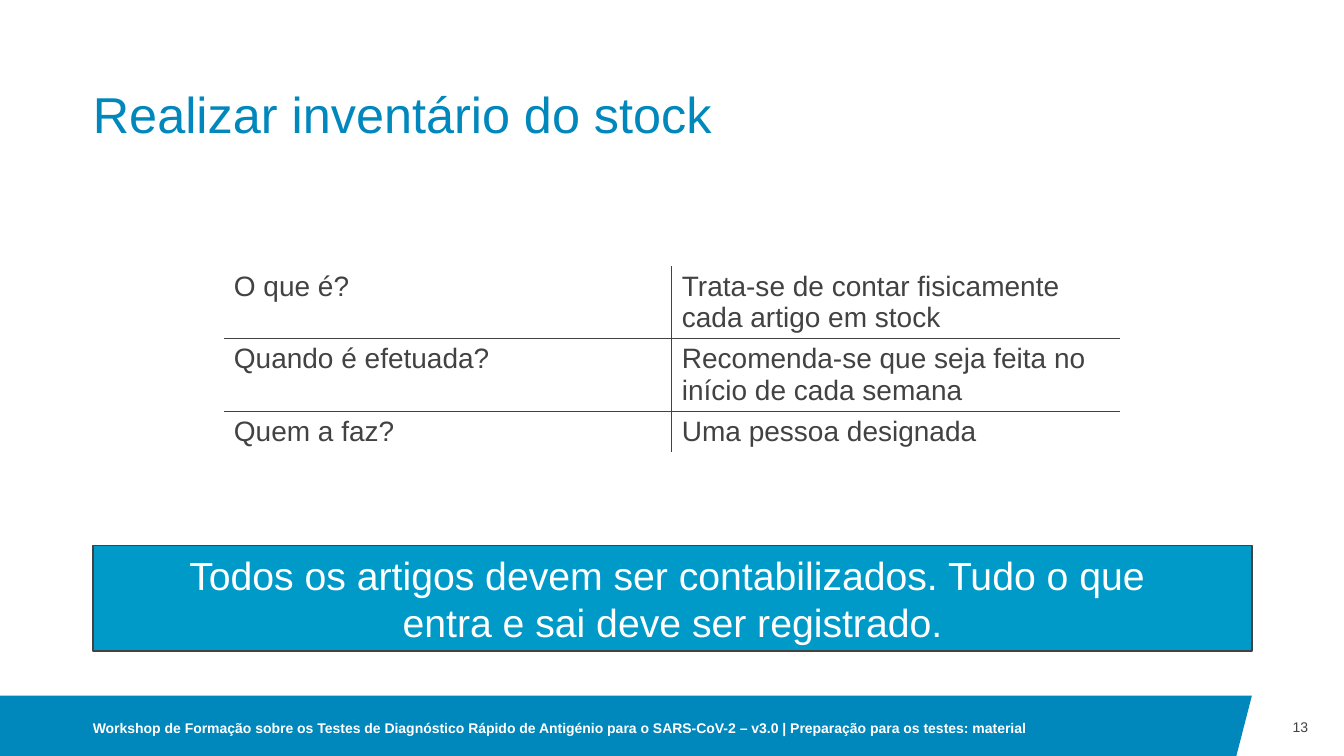
from lxml.etree import SubElement
from pptx import Presentation
from pptx.dml.color import RGBColor
from pptx.enum.shapes import MSO_SHAPE
from pptx.enum.text import MSO_ANCHOR, MSO_AUTO_SIZE, PP_ALIGN
from pptx.oxml import parse_xml
from pptx.oxml.ns import nsdecls, qn
from pptx.util import Cm, Pt

BLUE = RGBColor(0x00, 0x87, 0xBC)
CYAN = RGBColor(0x00, 0x9A, 0xC9)
GRAY = RGBColor(0x42, 0x42, 0x42)
WHITE = RGBColor(0xFF, 0xFF, 0xFF)

TITLE = "Realizar inventário do stock"
ROWS = [
    ("O que é?", "Trata-se de contar fisicamente cada artigo em stock"),
    ("Quando é efetuada?", "Recomenda-se que seja feita no início de cada semana"),
    ("Quem a faz?", "Uma pessoa designada"),
]
NOTE = [
    "Todos os artigos devem ser contabilizados. Tudo o que ",
    "entra e sai deve ser registrado.",
]
FOOTER = (
    "Workshop de Formação sobre os Testes de Diagnóstico Rápido de Antigénio "
    "para o SARS-CoV-2 – v3.0 | Preparação para os testes: material"
)
NUMBER = "13"

LEFT, WIDE = 2.34, 29.21
RIGHT = LEFT + WIDE
BAR = [(0, 17.53), (RIGHT, 17.53), (31.14, 19.12), (0, 19.12)]
GRID = (5.64, 6.7)
COL = 11.29
HEIGHTS = [1.83, 1.83, 1.04]

FORMATS = {
    "title": {"size": Pt(36), "color": BLUE, "bold": False},
    "cell": {"size": Pt(20), "color": GRAY, "bold": False},
    "note": {"size": Pt(28), "color": WHITE, "bold": False},
    "footer": {"size": Pt(10), "color": WHITE, "bold": True},
    "number": {"size": Pt(10), "color": GRAY, "bold": False},
}


def write(frame, lines, kind, align=PP_ALIGN.LEFT):
    frame.text = "\n".join(lines)
    for para in frame.paragraphs:
        para.alignment = align
        for run in para.runs:
            run.font.name = "Arial"
            for name, value in FORMATS[kind].items():
                if name == "color":
                    run.font.color.rgb = value
                else:
                    setattr(run.font, name, value)


def setup(frame, anchor, inset=0):
    values = {"word_wrap": True, "auto_size": MSO_AUTO_SIZE.NONE,
              "vertical_anchor": anchor}
    for side in ("left", "right", "top", "bottom"):
        values["margin_" + side] = Cm(inset)
    for name, value in values.items():
        setattr(frame, name, value)


def border(cell, sides):
    props = cell._tc.get_or_add_tcPr()
    for i, (side, shown) in enumerate(sides.items()):
        line = parse_xml(f'<a:ln{side} {nsdecls("a")} w="{Pt(1)}"/>')
        if shown:
            fill = SubElement(line, qn("a:solidFill"))
            SubElement(fill, qn("a:srgbClr"), val=str(GRAY))
        else:
            SubElement(line, qn("a:noFill"))
        props.insert(i, line)


def add_bar(slide):
    points = [(Cm(x), Cm(y)) for x, y in BAR]
    pen = slide.shapes.build_freeform(*points[0])
    pen.add_line_segments(points[1:], close=True)
    bar = pen.convert_to_shape()
    bar.shadow.inherit = False
    bar.fill.solid()
    bar.fill.fore_color.rgb = BLUE
    bar.line.fill.background()


def add_title(slide):
    title = slide.shapes.title
    place = {"left": LEFT, "top": 1.02, "width": WIDE, "height": 2.62}
    for name, value in place.items():
        setattr(title, name, Cm(value))
    setup(title.text_frame, MSO_ANCHOR.BOTTOM)
    write(title.text_frame, [TITLE], "title")
    title.text_frame.paragraphs[0].line_spacing = 0.9


def add_grid(slide):
    rows, cols = len(ROWS), len(ROWS[0])
    size = (COL * cols, sum(HEIGHTS))
    table = slide.shapes.add_table(rows, cols, *map(Cm, GRID + size)).table
    table.first_row = table.horz_banding = False
    for col in table.columns:
        col.width = Cm(COL)
    for r, texts in enumerate(ROWS):
        table.rows[r].height = Cm(HEIGHTS[r])
        for c, text in enumerate(texts):
            cell = table.cell(r, c)
            write(cell.text_frame, [text], "cell")
            cell.fill.background()
            border(cell, {"L": c > 0, "R": c < cols - 1,
                          "T": r > 0, "B": r < rows - 1})


def add_note(slide):
    place = map(Cm, (LEFT, 13.74, WIDE, 2.67))
    note = slide.shapes.add_shape(MSO_SHAPE.RECTANGLE, *place)
    note.shadow.inherit = False
    note.fill.solid()
    note.fill.fore_color.rgb = CYAN
    note.line.color.rgb = GRAY
    note.line.width = Pt(1)
    setup(note.text_frame, MSO_ANCHOR.MIDDLE, 0.15)
    write(note.text_frame, NOTE, "note", PP_ALIGN.CENTER)


def add_label(slide, text, kind, place, align):
    box = slide.shapes.add_textbox(*map(Cm, place))
    setup(box.text_frame, MSO_ANCHOR.MIDDLE)
    write(box.text_frame, [text], kind, align)


def main():
    deck = Presentation()
    deck.slide_width, deck.slide_height = Cm(33.87), Cm(19.05)
    slide = deck.slides.add_slide(deck.slide_layouts[5])
    add_bar(slide)
    add_title(slide)
    add_grid(slide)
    add_note(slide)
    add_label(slide, FOOTER, "footer", (LEFT, 17.65, 25.78, 1.4), PP_ALIGN.LEFT)
    add_label(slide, NUMBER, "number", (RIGHT, 17.53, 1.42, 1.6), PP_ALIGN.RIGHT)
    deck.save("out.pptx")


if __name__ == "__main__":
    main()
